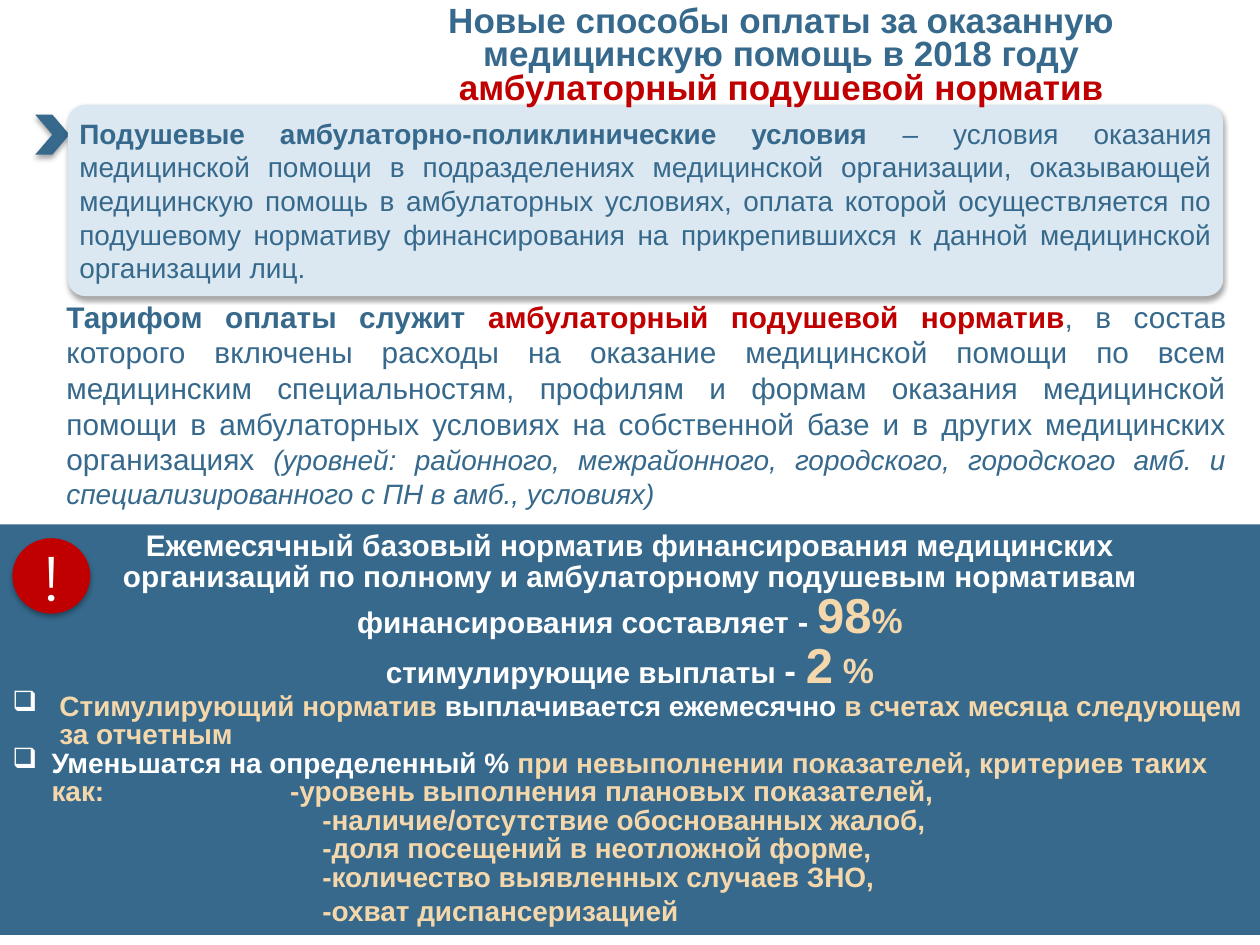
from dataclasses import dataclass
from typing import Optional

from lxml.etree import SubElement
from pptx import Presentation
from pptx.dml.color import RGBColor
from pptx.enum.shapes import MSO_SHAPE as Preset
from pptx.enum.text import MSO_ANCHOR as Anchor, MSO_AUTO_SIZE as AutoSize, PP_ALIGN as Align
from pptx.oxml.ns import qn
from pptx.util import Cm, Pt

BLUE = RGBColor(0x36, 0x69, 0x8C)
PALE = RGBColor(0xDB, 0xE8, 0xF1)
RED = RGBColor(0xC0, 0x00, 0x00)
SAND = RGBColor(0xF5, 0xD7, 0xAC)
WHITE = RGBColor(0xFF, 0xFF, 0xFF)


@dataclass(frozen=True)
class Box:
    left: float
    top: float
    width: float
    height: float

    def lengths(self) -> tuple:
        return Cm(self.left), Cm(self.top), Cm(self.width), Cm(self.height)


@dataclass(frozen=True)
class Piece:
    text: str
    size: float
    color: RGBColor
    bold: bool = True
    italic: bool = False
    font: str = "Arial"


@dataclass(frozen=True)
class Line:
    pieces: tuple
    align: Align = Align.LEFT
    spacing: float = 1.0
    margin: float = 0
    hanging: bool = False
    tab: Optional[float] = None


def write_line(paragraph, line: Line) -> None:
    paragraph.alignment = line.align
    paragraph.line_spacing = line.spacing
    props = paragraph._p.get_or_add_pPr()
    props.set("marL", str(Cm(line.margin)))
    props.set("indent", str(-Cm(line.margin) if line.hanging else 0))
    if line.hanging:
        bullet_color = SubElement(props, qn("a:buClr"))
        SubElement(bullet_color, qn("a:srgbClr"), val=str(WHITE))
        SubElement(props, qn("a:buChar"), char="❑")
    if line.tab is not None:
        tabs = SubElement(props, qn("a:tabLst"))
        SubElement(tabs, qn("a:tab"), pos=str(Cm(line.tab)), algn="l")
    for index, piece in enumerate(line.pieces):
        if index == 0:
            paragraph.text = piece.text
            runs = paragraph.runs
        else:
            runs = (paragraph.add_run(),)
            runs[0].text = piece.text
        for run in runs:
            run.font.name = piece.font
            run.font.size = Pt(piece.size)
            run.font.bold = piece.bold
            run.font.italic = piece.italic
            run.font.color.rgb = piece.color


def write_lines(shape, lines: tuple, grow: bool = True) -> None:
    frame = shape.text_frame
    frame.word_wrap = grow
    frame.auto_size = AutoSize.SHAPE_TO_FIT_TEXT if grow else AutoSize.NONE
    for index, line in enumerate(lines):
        write_line(frame.add_paragraph() if index else frame.paragraphs[0], line)


def set_insets(shape, across: float, down: float) -> None:
    frame = shape.text_frame
    frame.margin_left = frame.margin_right = Cm(across)
    frame.margin_top = frame.margin_bottom = Cm(down)


def add_figure(slide, preset: Preset, box: Box, fill: RGBColor, shaded: bool = True):
    figure = slide.shapes.add_shape(preset, *box.lengths())
    figure.fill.solid()
    figure.fill.fore_color.rgb = fill
    figure.line.fill.background()
    figure.shadow.inherit = False
    figure.text_frame.vertical_anchor = Anchor.MIDDLE
    if shaded:
        effects = figure._element.spPr.find(qn("a:effectLst"))
        shadow = SubElement(effects, qn("a:outerShdw"), blurRad=str(Pt(3)),
                            dist=str(Pt(1.8)), dir="5400000", rotWithShape="0")
        shade = SubElement(shadow, qn("a:srgbClr"), val="000000")
        SubElement(shade, qn("a:alpha"), val="35000")
    return figure


def criterion(text: str, spacing: float = 0.85) -> Line:
    return Line((Piece(text, 16, SAND),), spacing=spacing, margin=6.25)


NORMS = (
    Line((
        Piece("Ежемесячный базовый норматив финансирования медицинских\v"
              "организаций по полному и амбулаторному подушевым нормативам "
              "финансирования составляет", 17, WHITE),
        Piece(" - ", 18, WHITE), Piece("98", 28, SAND), Piece("%", 20, SAND),
    ), Align.CENTER, 0.85),
    Line((
        Piece("стимулирующие выплаты ", 17, WHITE), Piece("- ", 20, WHITE),
        Piece("2", 28, SAND), Piece(" %", 20, SAND),
    ), Align.CENTER, 0.85),
    Line((
        Piece("Стимулирующий норматив ", 16, SAND),
        Piece("выплачивается ежемесячно ", 16, WHITE),
        Piece("в счетах месяца следующем за отчетным", 16, SAND),
    ), spacing=0.85, margin=0.95, hanging=True),
    Line((
        Piece("Уменьшатся на определенный % ", 16, WHITE),
        Piece("при невыполнении показателей, критериев таких как:"
              "\t-уровень выполнения плановых показателей,", 16, SAND),
    ), spacing=0.85, margin=0.79, hanging=True, tab=5.6),
    criterion("-наличие/отсутствие обоснованных жалоб,"),
    criterion("-доля посещений в неотложной форме,"),
    criterion("-количество выявленных случаев ЗНО,"),
    criterion("-охват диспансеризацией", 1.0),
)

TARIFF = Line((
    Piece("Тарифом оплаты служит ", 17, BLUE),
    Piece("амбулаторный подушевой норматив", 17, RED),
    Piece(", в состав которого включены расходы на оказание медицинской помощи "
          "по всем медицинским специальностям, профилям и формам оказания "
          "медицинской помощи в амбулаторных условиях на собственной базе и в "
          "других медицинских организациях ", 17, BLUE, bold=False),
    Piece("(уровней: районного, межрайонного, городского, городского амб. и "
          "специализированного с ПН в амб., условиях)", 16, BLUE, bold=False, italic=True),
), Align.JUSTIFY)

DEFINITION = Line((
    Piece("Подушевые амбулаторно-поликлинические условия", 16, BLUE),
    Piece(" – условия оказания медицинской помощи в подразделениях медицинской "
          "организации, оказывающей медицинскую помощь в амбулаторных условиях, "
          "оплата которой осуществляется по подушевому нормативу финансирования "
          "на прикрепившихся к данной медицинской организации лиц.",
          16, BLUE, bold=False),
), Align.JUSTIFY)

TITLE = (
    Line((Piece("Новые способы оплаты за оказанную медицинскую помощь в 2018 году",
                20, BLUE),), Align.CENTER, 0.8),
    Line((Piece("амбулаторный подушевой норматив", 20, RED),), Align.CENTER, 0.8),
)


def main() -> None:
    deck = Presentation()
    deck.slide_width, deck.slide_height = Cm(25.4), Cm(19.05)
    slide = deck.slides.add_slide(deck.slide_layouts[6])

    norms = add_figure(slide, Preset.RECTANGLE, Box(0, 10.57, 25.4, 8.28), BLUE, shaded=False)
    write_lines(norms, NORMS)

    tariff = slide.shapes.add_textbox(*Box(1.09, 5.89, 23.88, 4.7).lengths())
    write_lines(tariff, (TARIFF,))

    add_figure(slide, Preset.CHEVRON, Box(0.71, 2.31, 0.69, 0.81), BLUE)

    definition = add_figure(slide, Preset.ROUNDED_RECTANGLE, Box(1.37, 2.11, 23.29, 3.86), PALE)
    definition.adjustments[0] = 0.09
    set_insets(definition, 0.13, 0.13)
    write_lines(definition, (DEFINITION,))

    warning = add_figure(slide, Preset.OVAL, Box(0.25, 10.85, 1.57, 1.52), RED)
    set_insets(warning, 0.13, 0)
    mark = Piece("!", 36, WHITE, bold=False, font="Montserrat")
    write_lines(warning, (Line((mark,), Align.CENTER),), grow=False)

    title = slide.shapes.add_textbox(*Box(6.58, 0, 18.34, 2.31).lengths())
    write_lines(title, TITLE)

    deck.save("out.pptx")


if __name__ == "__main__":
    main()
